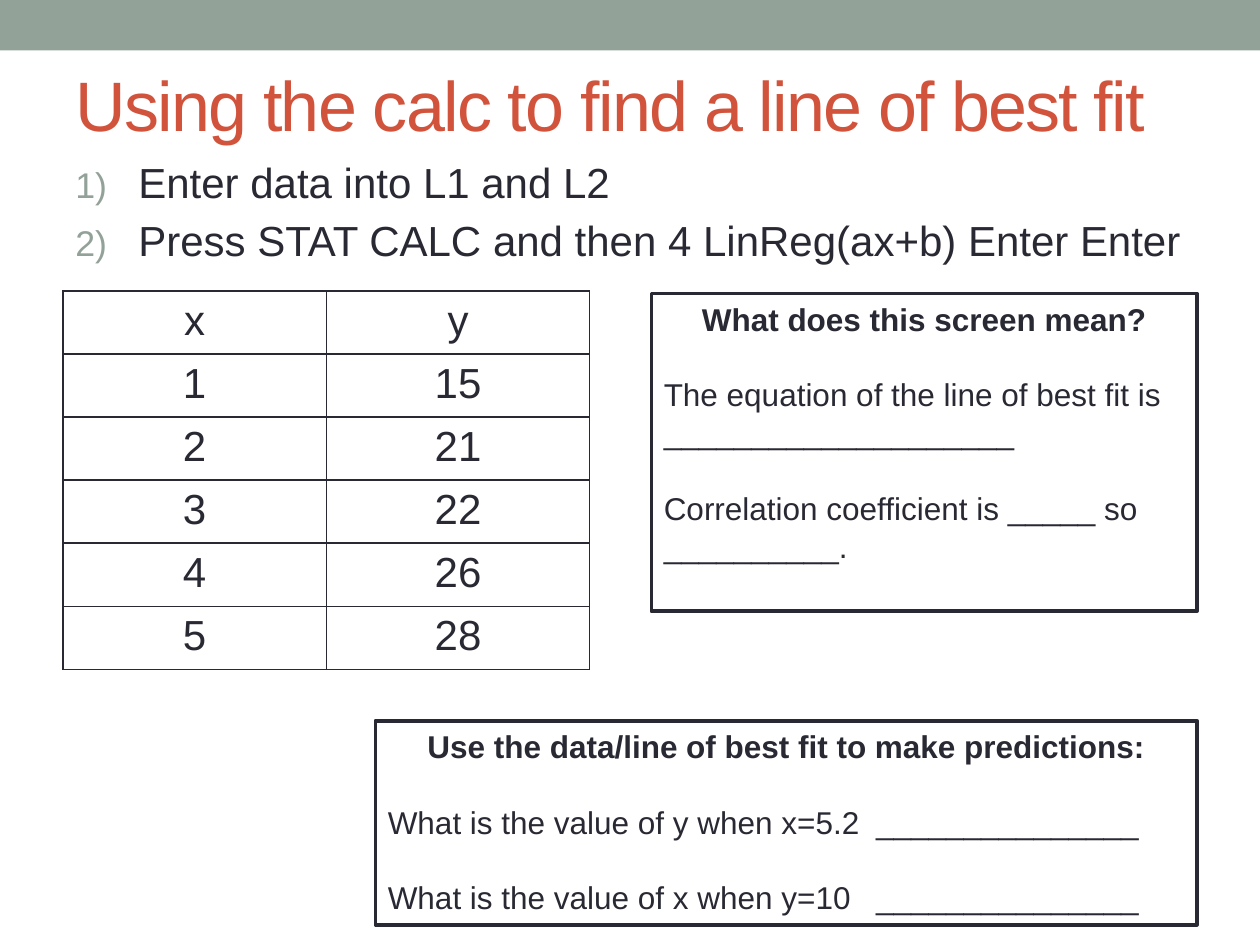
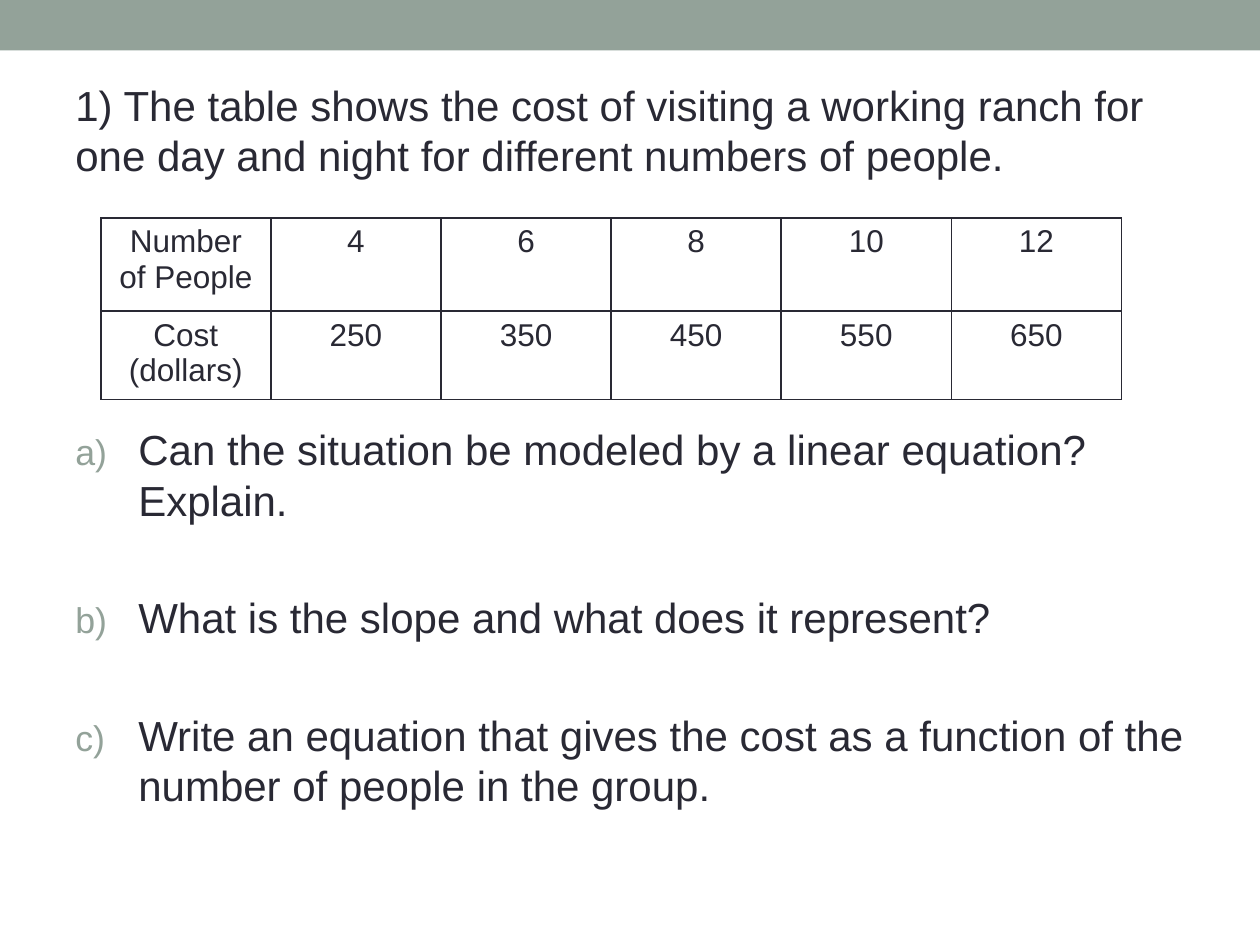
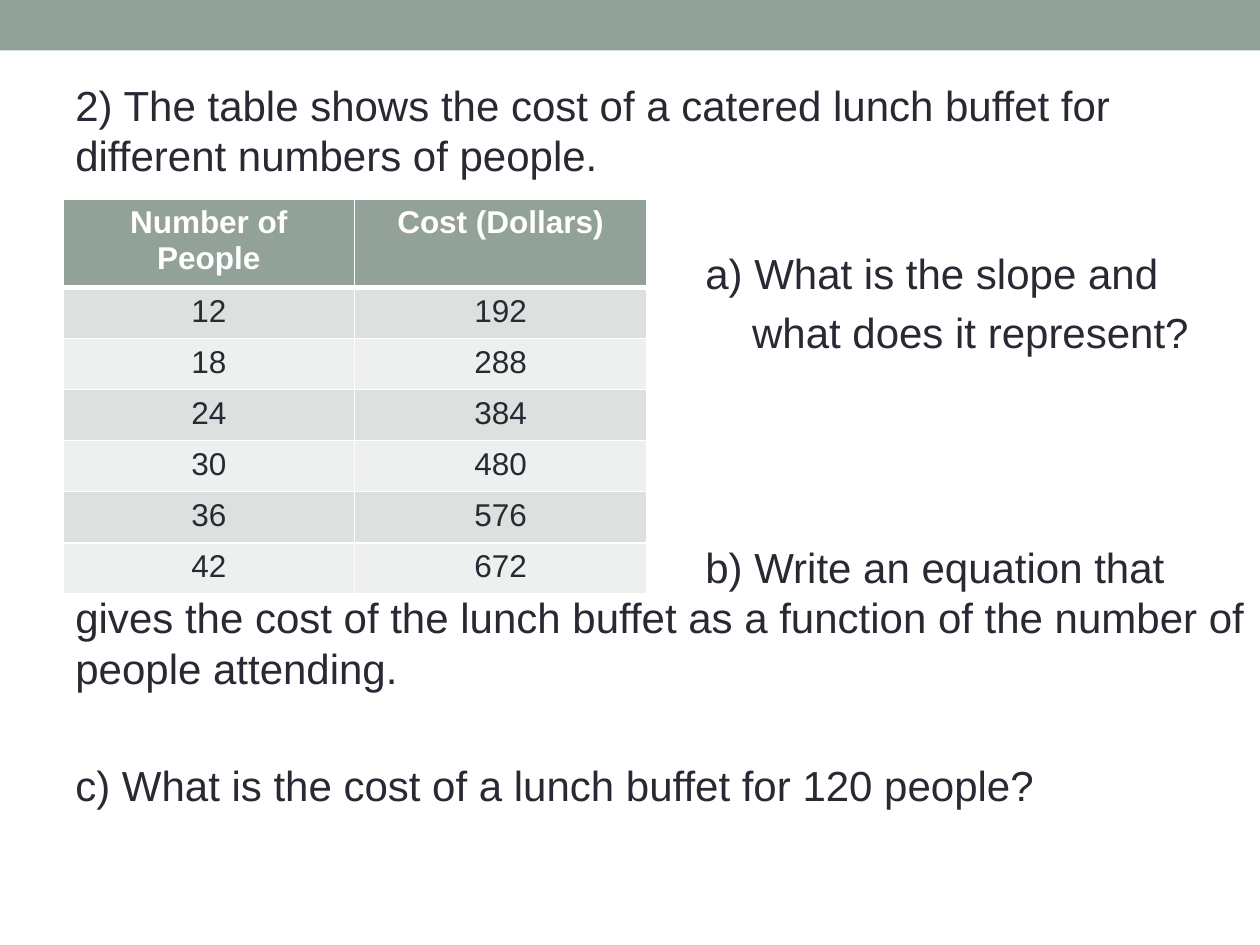
"""Build three slides about lines of best fit and linear models."""
from lxml import etree
from pptx import Presentation
from pptx.dml.color import RGBColor
from pptx.enum.shapes import MSO_SHAPE
from pptx.enum.text import MSO_ANCHOR, PP_ALIGN
from pptx.oxml.ns import qn
from pptx.util import Pt

RECTANGLE = MSO_SHAPE.RECTANGLE
LEFT, CENTER = PP_ALIGN.LEFT, PP_ALIGN.CENTER
TOP, MIDDLE = MSO_ANCHOR.TOP, MSO_ANCHOR.MIDDLE

SAGE = RGBColor(0x93, 0xA2, 0x99)
RUST = RGBColor(0xD2, 0x53, 0x3C)
INK = RGBColor(0x29, 0x29, 0x34)
WHITE = RGBColor(0xFF, 0xFF, 0xFF)
BAND_DARK = RGBColor(0xDC, 0xE0, 0xDE)
BAND_LIGHT = RGBColor(0xEE, 0xF0, 0xEF)

FONT = "Arial"
TITLE_SIZE, BODY_SIZE, SMALL_SIZE = 40, 24, 18
LEADING = 1.2
BODY_GAP = 4.8
BODY_LINE = BODY_SIZE * LEADING + BODY_GAP
SMALL_LINE = SMALL_SIZE * LEADING
MARGIN = 36
HANGING = 36
BESIDE_TABLE = 360
NUMBERS, LETTERS = "arabicParenR", "alphaLcParenR"

TITLE = "Using the calc to find a line of best fit"
STEPS = [
    {"text": "Enter data into L1 and L2", "numbering": NUMBERS},
    {"text": "Press STAT CALC and then 4 LinReg(ax+b) Enter Enter", "numbering": NUMBERS},
]
XY_ROWS = [("x", "y"), ("1", "15"), ("2", "21"), ("3", "22"), ("4", "26"), ("5", "28")]
BLANK = "_" * 15
CALLOUTS = [
    ((372.25, 167.75, 311.75, 181.5), "What does this screen mean?", [
        "The equation of the line of best fit is ____________________",
        "Correlation coefficient is _____ so __________."]),
    ((214.5, 411.85, 469.5, 116.6), "Use the data/line of best fit to make predictions:", [
        f"What is the value of y when x=5.2\t{BLANK}",
        f"What is the value of x when y=10\t{BLANK}"]),
]
ANSWER_TAB = 279

RANCH_QUESTIONS = [
    {"text": "1) The table shows the cost of visiting a working ranch for one day "
             "and night for different numbers of people."},
    {"text": "Can the situation be modeled by a linear equation? Explain.",
     "numbering": LETTERS, "skipped": 4},
    {"text": "What is the slope and what does it represent?",
     "numbering": LETTERS, "skipped": 1},
    {"text": "Write an equation that gives the cost as a function of the number "
             "of people in the group.", "numbering": LETTERS, "skipped": 1},
]
RANCH_ROWS = [
    ("Number of People", "4", "6", "8", "10", "12"),
    ("Cost (dollars)", "250", "350", "450", "550", "650"),
]

LUNCH_QUESTIONS = [
    {"text": "2) The table shows the cost of a catered lunch buffet for different "
             "numbers of people."},
    {"text": "a) What is the slope and", "indent": BESIDE_TABLE, "skipped": 1},
    {"text": "what does it represent?", "indent": BESIDE_TABLE + 26.7},
    {"text": "b) Write an equation that gives the cost of the lunch buffet as a "
             "function of the number of people attending.",
     "indent": BESIDE_TABLE, "skipped": 3},
    {"text": "c) What is the cost of a lunch buffet for 120 people?", "skipped": 1},
]
LUNCH_ROWS = [
    ("Number of People", "Cost (Dollars)"), ("12", "192"), ("18", "288"),
    ("24", "384"), ("30", "480"), ("36", "576"), ("42", "672"),
]


def points(*lengths):
    return [Pt(length) for length in lengths]


def set_font(paragraph, size, color=INK, bold=False):
    font = paragraph.font
    font.name, font.size, font.bold = FONT, Pt(size), bold
    font.color.rgb = color


def write_paragraph(frame, text, size, before=0, color=INK, bold=False, align=LEFT):
    paragraph = frame.paragraphs[0]
    if paragraph.runs:
        paragraph = frame.add_paragraph()
    paragraph.add_run().text = text
    paragraph.alignment = align
    paragraph.line_spacing = Pt(size * LEADING)
    paragraph.space_before = Pt(before)
    set_font(paragraph, size, color, bold)
    return paragraph


def insert_properties(paragraph, *elements):
    defaults = paragraph._p.pPr.find(qn("a:defRPr"))
    for element in elements:
        defaults.addprevious(element)


def make_element(tag, **attributes):
    return etree.Element(qn(tag), attributes)


def add_numbering(paragraph, scheme):
    color = make_element("a:buClr")
    etree.SubElement(color, qn("a:srgbClr"), val=str(SAGE))
    insert_properties(paragraph, color, make_element("a:buSzPct", val="85000"),
                      make_element("a:buAutoNum", type=scheme))


def add_tab_stop(paragraph, position):
    tabs = make_element("a:tabLst")
    etree.SubElement(tabs, qn("a:tab"), pos=str(Pt(position)), algn="l")
    insert_properties(paragraph, tabs)


def set_indent(paragraph, left, first):
    properties = paragraph._p.pPr
    properties.set("marL", str(Pt(left)))
    properties.set("indent", str(Pt(first)))


def add_text_box(slide, place, anchor=TOP):
    frame = slide.shapes.add_textbox(*points(*place)).text_frame
    frame.word_wrap = True
    frame.vertical_anchor = anchor
    return frame


def add_rectangle(slide, place, fill, line=None):
    shape = slide.shapes.add_shape(RECTANGLE, *points(*place))
    shape.shadow.inherit = False
    shape.fill.solid()
    shape.fill.fore_color.rgb = fill
    if line is None:
        shape.line.fill.background()
    else:
        shape.line.color.rgb = line
        shape.line.width = Pt(2.08)
    return shape


def add_slide(presentation):
    slide = presentation.slides.add_slide(presentation.slide_layouts[6])
    add_rectangle(slide, (0, 0, 720, 28.8), SAGE)
    return slide


def add_title(slide, text):
    frame = add_text_box(slide, (MARGIN, 20.15, 648, 77.75), MIDDLE)
    paragraph = write_paragraph(frame, text, TITLE_SIZE, color=RUST)
    paragraph._p.pPr.find(qn("a:defRPr")).set("spc", "-100")


def add_body(slide, items, top, width, height):
    frame = add_text_box(slide, (MARGIN, top, width, height))
    for index, item in enumerate(items):
        before = BODY_GAP + BODY_LINE * item.get("skipped", 0) if index else 0
        paragraph = write_paragraph(frame, item["text"], BODY_SIZE, before)
        if "numbering" in item:
            set_indent(paragraph, HANGING, -HANGING)
            add_numbering(paragraph, item["numbering"])
        else:
            set_indent(paragraph, 0, item.get("indent", 0))


def add_callout(slide, place, heading, lines):
    frame = add_rectangle(slide, place, WHITE, INK).text_frame
    frame.word_wrap = True
    frame.vertical_anchor = TOP
    write_paragraph(frame, heading, SMALL_SIZE, bold=True, align=CENTER)
    for text in lines:
        paragraph = write_paragraph(frame, text, SMALL_SIZE, SMALL_LINE)
        if "\t" in text:
            add_tab_stop(paragraph, ANSWER_TAB)


def set_borders(cell, color, widths):
    properties = cell._tc.get_or_add_tcPr()
    for side, width in zip("LRTB", widths):
        line = etree.SubElement(properties, qn(f"a:ln{side}"), w=str(Pt(width)))
        fill = etree.SubElement(line, qn("a:solidFill"))
        etree.SubElement(fill, qn("a:srgbClr"), val=str(color))


def add_table(slide, rows, left, top, column_width, row_heights, size, banded=False):
    width = column_width * len(rows[0])
    table = slide.shapes.add_table(len(rows), len(rows[0]), *points(
        left, top, width, sum(row_heights))).table
    table.first_row = table.horz_banding = False
    for column in table.columns:
        column.width = Pt(column_width)
    for row_index, (row, height) in enumerate(zip(rows, row_heights)):
        table.rows[row_index].height = Pt(height)
        header = banded and row_index == 0
        above = 3 if banded and row_index == 1 else 1
        below = 3 if header else 1
        for column_index, text in enumerate(row):
            cell = table.cell(row_index, column_index)
            set_borders(cell, WHITE if banded else INK, (1, 1, above, below))
            if banded:
                cell.fill.solid()
                band = BAND_DARK if row_index % 2 else BAND_LIGHT
                cell.fill.fore_color.rgb = SAGE if header else band
            else:
                cell.fill.background()
            paragraph = cell.text_frame.paragraphs[0]
            paragraph.add_run().text = text
            paragraph.alignment = CENTER
            set_font(paragraph, size, WHITE if header else INK, header)


def main():
    presentation = Presentation()
    presentation.slide_width, presentation.slide_height = Pt(720), Pt(540)

    calculator = add_slide(presentation)
    add_title(calculator, TITLE)
    add_body(calculator, STEPS, 85.7, 648, 76)
    add_table(calculator, XY_ROWS, MARGIN, 166.3, 150.5, [34] * 6, BODY_SIZE)
    for place, heading, lines in CALLOUTS:
        add_callout(calculator, place, heading, lines)

    ranch = add_slide(presentation)
    add_body(ranch, RANCH_QUESTIONS, 41.75, 648, 468.7)
    add_table(ranch, RANCH_ROWS, 57.6, 124.55, 97.2, [53.3, 47.4], SMALL_SIZE)

    lunch = add_slide(presentation)
    add_body(lunch, LUNCH_QUESTIONS, 41.75, 684, 468.7)
    add_table(lunch, LUNCH_ROWS, MARGIN, 113.75, 166.7, [47] + [29.2] * 6,
              SMALL_SIZE, banded=True)

    presentation.save("out.pptx")


if __name__ == "__main__":
    main()
